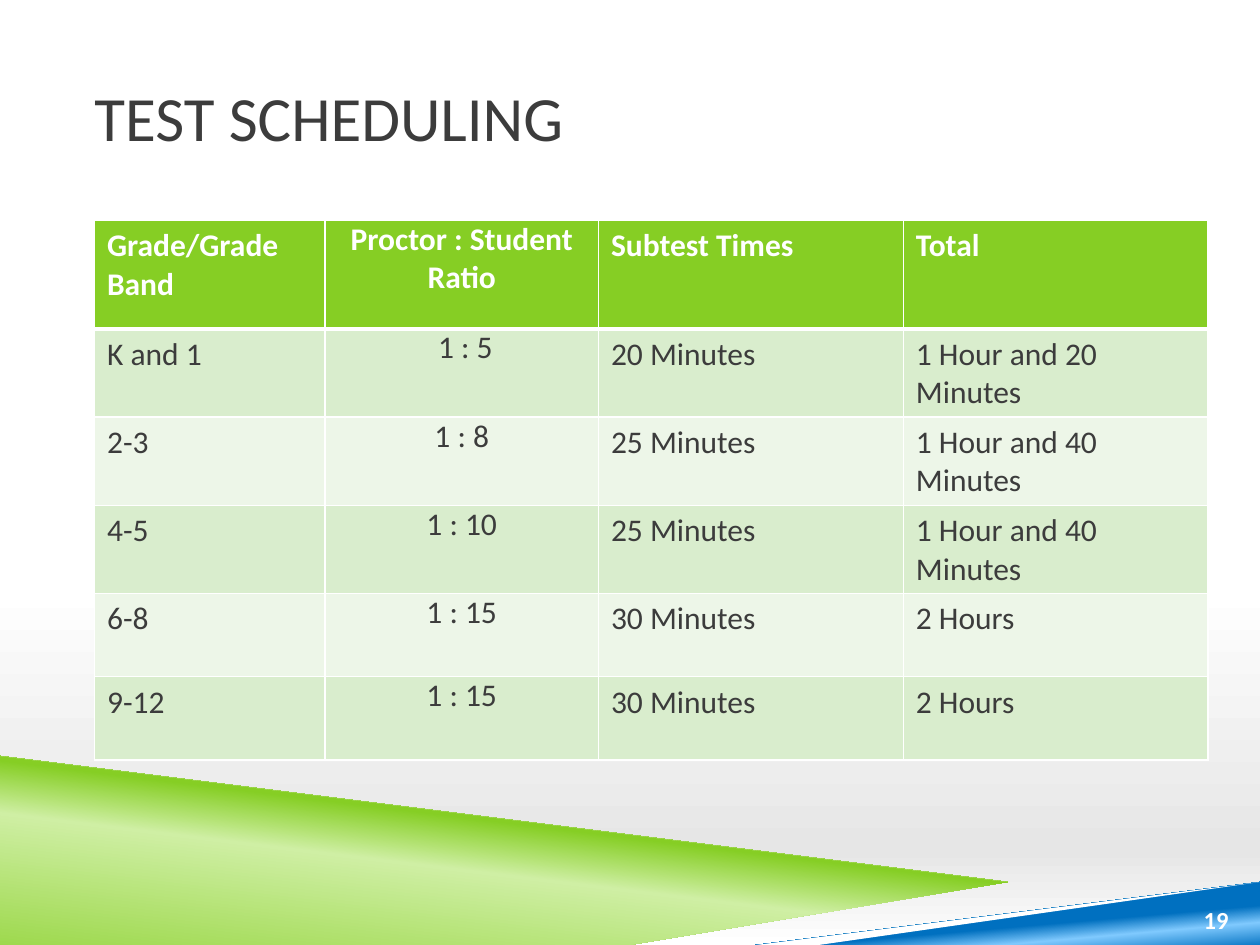
from lxml.etree import SubElement as Sub
from pptx import Presentation
from pptx.dml.color import RGBColor
from pptx.enum.text import MSO_ANCHOR as Anchor, PP_ALIGN as Align
from pptx.oxml.ns import qn
from pptx.util import Inches, Pt

# Content
TITLE = "TEST SCHEDULING"
PAGE = "19"
ROWS = [
    ("Grade/Grade Band", "Proctor : Student Ratio", "Subtest Times", "Total"),
    ("K and 1", " 1 : 5", "20 Minutes", "1 Hour and 20 Minutes"),
    ("2-3", "1 : 8", "25 Minutes", "1 Hour and 40 Minutes"),
    ("4-5", "1 : 10", "25 Minutes", "1 Hour and 40 Minutes"),
    ("6-8", "1 : 15", "30 Minutes", "2 Hours"),
    ("9-12", "1 : 15", "30 Minutes", "2 Hours"),
]
RATIO = 1  # the centred column

# Style
FONT = "Calibri"
WHITE = RGBColor(0xFF, 0xFF, 0xFF)
GREY = RGBColor(0xE6, 0xE6, 0xE6)
INK = RGBColor(0x3C, 0x3C, 0x3C)
GREEN = RGBColor(0x86, 0xCE, 0x24)
LIME = RGBColor(0xCF, 0xEF, 0xA4)
BLUE = RGBColor(0x00, 0x70, 0xC0)
SKY = RGBColor(0x80, 0xCA, 0xFF)
BANDS = [RGBColor(0xED, 0xF6, 0xE8), RGBColor(0xD9, 0xED, 0xCD)]

# Layout in inches
WIDE, HIGH = 10, 7.5
LEFT, TOP = 0.75, 1.75
COLS = [1.83, 2.17, 2.42, 2.42]
HEAD, ROW = 0.86, 0.66

# Bottom wedges: corner points, then a plain colour or (stops, angle)
WEDGES = [
    ([(0, 5.97), (7.92, 6.92), (2, HIGH), (0, HIGH)],
     ([(0, GREEN), (52, LIME), (66, GREEN)], 277)),
    ([(1.98, HIGH), (WIDE, 6.72), (WIDE, HIGH)],
     ([(28, BLUE), (40, SKY), (48, BLUE)], 265)),
    ([(0, 5.92), (0, 6), (7.9, 6.93), (8.32, 6.9)], WHITE),
    ([(WIDE, 6.69), (1.84, HIGH), (2.66, HIGH), (WIDE, 6.77)], WHITE),
]


def fade(fill, props, stops, angle):
    """Give a fill any number of gradient stops; the angle runs clockwise."""
    fill.gradient()
    fill.gradient_angle = 360 - angle
    group = props.find(qn("a:gradFill")).find(qn("a:gsLst"))
    for old in list(group):
        group.remove(old)
    for pos, tint in stops:
        stop = Sub(group, qn("a:gs"), pos=str(pos * 1000))
        Sub(stop, qn("a:srgbClr"), val=str(tint))


def wedge(slide, points, paint):
    pen = slide.shapes.build_freeform(*points[0], scale=Inches(1))
    pen.add_line_segments(points[1:], close=True)
    shape = pen.convert_to_shape()
    shape.shadow.inherit = False
    shape.line.fill.background()
    if isinstance(paint, RGBColor):
        shape.fill.solid()
        shape.fill.fore_color.rgb = paint
    else:
        fade(shape.fill, shape._element.spPr, *paint)


def style(para, size, tint, bold=False, align=Align.LEFT):
    para.alignment = align
    font = para.font
    font.name, font.size, font.bold = FONT, Pt(size), bold
    font.color.rgb = tint


def label(slide, text, place, anchor, foot, *look):
    box = slide.shapes.add_textbox(*map(Inches, place))
    frame = box.text_frame
    frame.word_wrap = True
    frame.vertical_anchor = anchor
    frame.margin_left = frame.margin_right = 0
    frame.margin_top, frame.margin_bottom = Inches(0.05), Inches(foot)
    frame.text = text
    style(frame.paragraphs[0], *look)


def border(cell, top, bottom):
    props = cell._tc.get_or_add_tcPr()
    for side, width in zip("LRTB", (1, 1, top, bottom)):
        line = Sub(props, qn(f"a:ln{side}"), w=str(Pt(width)))
        Sub(Sub(line, qn("a:solidFill")), qn("a:srgbClr"), val=str(WHITE))


def schedule(slide):
    tall = HEAD + ROW * (len(ROWS) - 1)
    place = map(Inches, (LEFT, TOP, sum(COLS), tall))
    table = slide.shapes.add_table(len(ROWS), len(COLS), *place).table
    for col, width in zip(table.columns, COLS):
        col.width = Inches(width)
    for r, texts in enumerate(ROWS):
        head = r == 0
        table.rows[r].height = Inches(HEAD if head else ROW)
        for c, text in enumerate(texts):
            cell = table.cell(r, c)
            cell.text = text
            mid = c == RATIO
            if mid:
                cell.margin_left = cell.margin_right = 0
                cell.margin_top = cell.margin_bottom = 0
            style(cell.text_frame.paragraphs[0], 18, WHITE if head else INK,
                  head, Align.CENTER if mid else Align.LEFT)
            border(cell, 3 if r == 1 else 1, 3 if head else 1)
            cell.fill.solid()
            cell.fill.fore_color.rgb = GREEN if head else BANDS[r % 2]


def main():
    deck = Presentation()
    deck.slide_width, deck.slide_height = Inches(WIDE), Inches(HIGH)
    slide = deck.slides.add_slide(deck.slide_layouts[6])

    # Background and wedges
    fill = slide.background.fill
    fade(fill, slide._element.cSld.bg.bgPr,
         [(0, WHITE), (62, WHITE), (90, GREY), (100, WHITE)], 90)
    for points, paint in WEDGES:
        wedge(slide, points, paint)

    # Title, table and page number
    label(slide, TITLE, (LEFT, 0.3, 8.5, 1.25), Anchor.MIDDLE, 0.05, 36, INK)
    schedule(slide)
    label(slide, PAGE, (9, 7.02, 0.75, 0.4), Anchor.BOTTOM, 0,
          14, WHITE, True, Align.RIGHT)
    deck.save("out.pptx")


if __name__ == "__main__":
    main()
